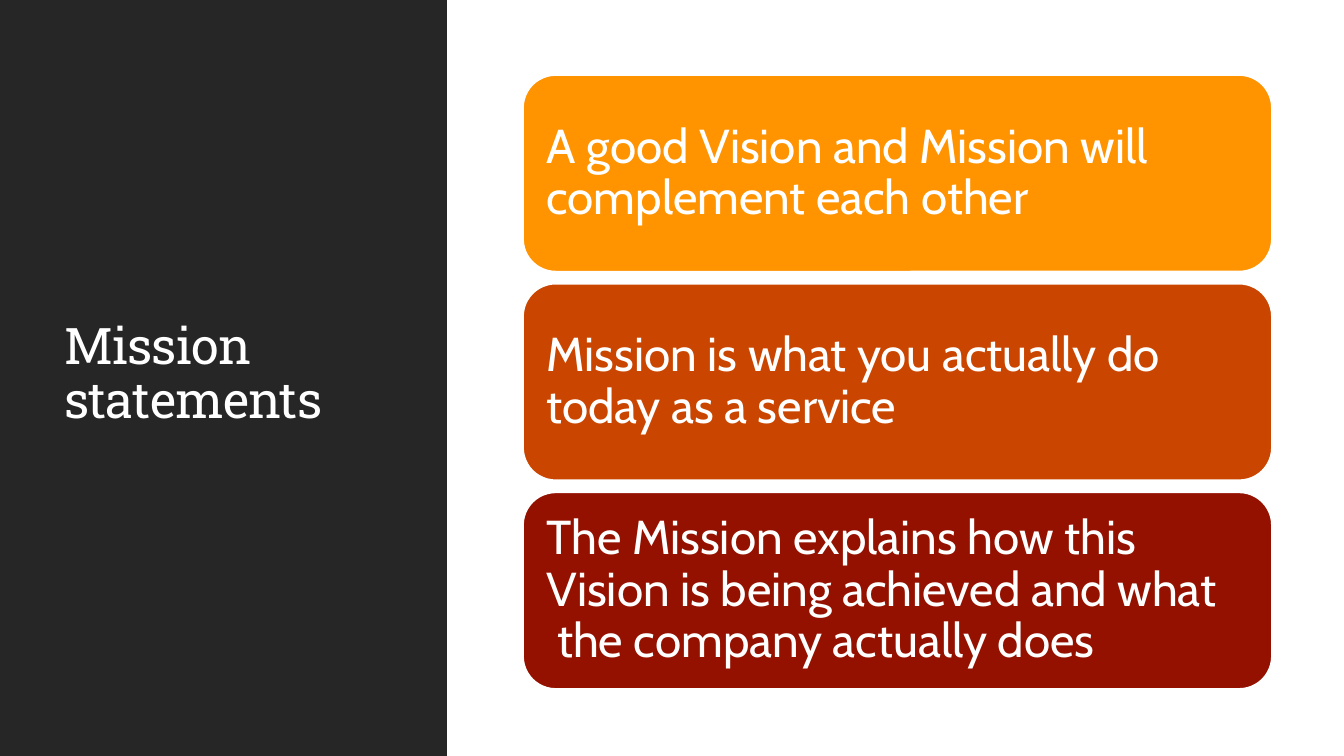
from dataclasses import dataclass

from pptx import Presentation
from pptx import util as u
from pptx.dml.color import RGBColor
from pptx.enum import shapes, text


@dataclass(frozen=True)
class Theme:
    panel: str = "262626"
    paper: str = "FFFFFF"
    cards: tuple = ("FF9300", "CA4600", "941100")
    heading_font: str = "Roboto Slab"
    body_font: str = "Cabin"
    heading_size: int = 36
    body_size: int = 34
    outline: float = 1.25
    line_spacing: float = 0.9


THEME = Theme()
SLIDE_WIDTH, SLIDE_HEIGHT = 1344, 756
STATEMENTS = (
    "A good Vision and Mission will complement each other",
    "Mission is what you actually do today as a service",
    "The Mission explains how this Vision is being achieved and what\v the company actually does",
)


def px(length):
    return u.Emu(round(length * 914400 / 100.8))


def add_block(slide, kind, box, fill):
    block = slide.shapes.add_shape(kind, *map(px, box))
    block.shadow.inherit = False
    block.fill.solid()
    block.fill.fore_color.rgb = RGBColor.from_string(fill)
    block.line.fill.background()
    return block


def write(shape, words, font, size, inset_x, inset_y):
    frame = shape.text_frame
    frame.word_wrap = True
    frame.vertical_anchor = text.MSO_ANCHOR.MIDDLE
    frame.margin_left = frame.margin_right = px(inset_x)
    frame.margin_top = frame.margin_bottom = px(inset_y)
    paragraph = frame.paragraphs[0]
    paragraph.text = words
    paragraph.alignment = text.PP_ALIGN.LEFT
    paragraph.line_spacing = THEME.line_spacing
    paragraph.font.name = font
    paragraph.font.size = u.Pt(size)
    paragraph.font.color.rgb = RGBColor.from_string(THEME.paper)
    return paragraph


def title_panel(slide, box, words):
    left, top, width, height = box
    add_block(slide, shapes.MSO_SHAPE.RECTANGLE, box, THEME.panel)
    title = slide.shapes.add_textbox(
        px(left + 54), px(top + 57), px(width - 107), px(height - 120))
    heading = write(title, words, THEME.heading_font, THEME.heading_size, 10, 5)
    for run in heading.runs:
        run._r.get_or_add_rPr().set("spc", "-50")


def statement_cards(slide, box, statements):
    left, top, width, height = box
    gap = 12
    card_height = (height - gap * (len(statements) - 1)) / len(statements)
    for row, (words, fill) in enumerate(zip(statements, THEME.cards)):
        card_top = top + row * (card_height + gap)
        card = add_block(slide, shapes.MSO_SHAPE.ROUNDED_RECTANGLE,
                         (left, card_top, width, card_height), fill)
        card.line.color.rgb = RGBColor.from_string(THEME.paper)
        card.line.width = u.Pt(THEME.outline)
        write(card, words, THEME.body_font, THEME.body_size, 14, 14)


def main():
    deck = Presentation()
    deck.slide_width, deck.slide_height = px(SLIDE_WIDTH), px(SLIDE_HEIGHT)
    slide = deck.slides.add_slide(deck.slide_layouts[6])
    title_panel(slide, (0, 0, 447, SLIDE_HEIGHT), "Mission statements")
    statement_cards(slide, (523, 75, 749, 614), STATEMENTS)
    deck.save("out.pptx")


if __name__ == "__main__":
    main()
